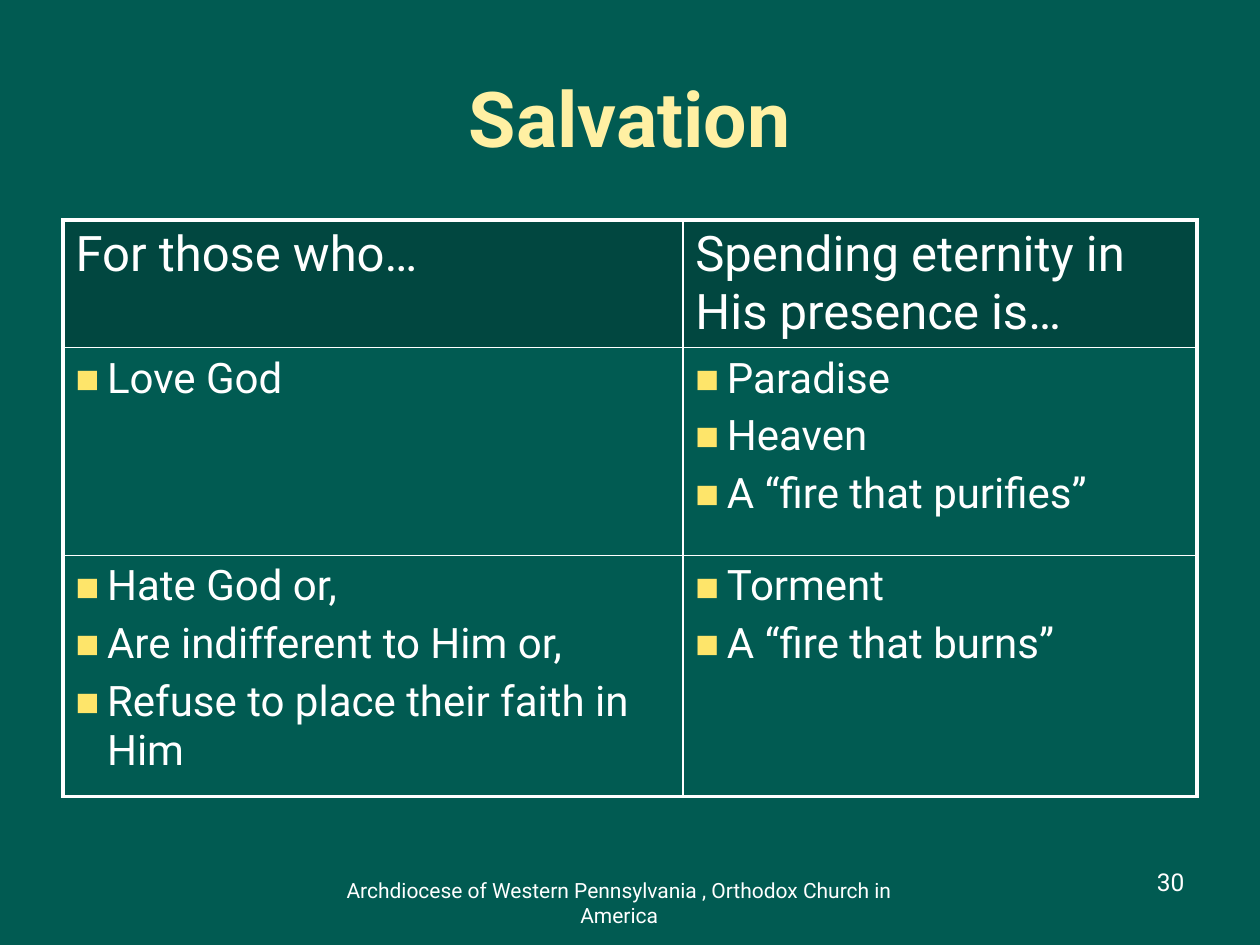
from dataclasses import dataclass
from lxml.etree import SubElement
from pptx import Presentation
from pptx.dml.color import RGBColor
from pptx.enum.text import MSO_ANCHOR, PP_ALIGN
from pptx.oxml.ns import qn
from pptx.util import Inches, Pt


@dataclass(frozen=True)
class Theme:
    font: str = "Roboto"
    back: str = "015B52"
    head: str = "014740"
    text: str = "FFFFFF"
    title: str = "FFF0A3"
    mark: str = "FEE56A"
    big: int = 44
    high: int = 28
    body: int = 24
    page: int = 14
    foot: int = 12
    outer: float = 2.25
    inner: float = 1


@dataclass(frozen=True)
class Label:
    text: str
    box: tuple[float, float, float, float]
    size: int
    color: str
    align: PP_ALIGN
    bold: bool = False
    anchor: MSO_ANCHOR = MSO_ANCHOR.TOP


LOOK = Theme()
WIDE, HIGH = Inches(10), Inches(7.5)
COLS = (0.492, 0.408)
ROWS = (0.135, 0.22, 0.255)
LABELS = (
    Label("Salvation", (0.05, 0.04, 0.9, 0.167), LOOK.big, LOOK.title,
          PP_ALIGN.CENTER, True, MSO_ANCHOR.MIDDLE),
    Label("30", (0.717, 0.911, 0.233, 0.067), LOOK.page, LOOK.text, PP_ALIGN.RIGHT),
    Label("Archdiocese of Western Pennsylvania , Orthodox Church in America",
          (0.233, 0.922, 0.517, 0.067), LOOK.foot, LOOK.text, PP_ALIGN.CENTER),
)
CELLS = (
    (("For those who…",), ("Spending eternity in His presence is…",)),
    (("Love God",), ("Paradise", "Heaven", "A “fire that purifies”")),
    (("Hate God or,", "Are indifferent to Him or,", "Refuse to place their faith in Him"),
     ("Torment", "A “fire that burns”")),
)


def place(x: float, y: float, w: float, h: float) -> tuple[int, ...]:
    return int(x * WIDE), int(y * HIGH), int(w * WIDE), int(h * HIGH)


def style(par, size: int, color: str, bold: bool = False) -> None:
    font = par.font
    font.name, font.size, font.bold = LOOK.font, Pt(size), bold
    font.color.rgb = RGBColor.from_string(color)


def write(slide, label: Label) -> None:
    frame = slide.shapes.add_textbox(*place(*label.box)).text_frame
    frame.word_wrap = True
    frame.vertical_anchor = label.anchor
    par = frame.paragraphs[0]
    par.text, par.alignment = label.text, label.align
    style(par, label.size, label.color, label.bold)


def space(par) -> None:
    gap = SubElement(par._p.get_or_add_pPr(), qn("a:spcBef"))
    SubElement(gap, qn("a:spcPct"), val="20000")


def mark(par) -> None:
    props = par._p.get_or_add_pPr()
    props.set("marL", str(Inches(0.25)))
    props.set("indent", str(-Inches(0.25)))
    tint = SubElement(props, qn("a:buClr"))
    SubElement(tint, qn("a:srgbClr"), val=LOOK.mark)
    SubElement(props, qn("a:buSzPct"), val="60000")
    SubElement(props, qn("a:buFont"), typeface=LOOK.font)
    SubElement(props, qn("a:buChar"), char="■")


def edge(cell, row: int, col: int) -> None:
    sides = {"L": col == 0, "R": col == len(COLS) - 1,
             "T": row == 0, "B": row == len(ROWS) - 1}
    props = cell._tc.get_or_add_tcPr()
    for side, outer in sides.items():
        width = Pt(LOOK.outer if outer else LOOK.inner)
        line = SubElement(props, qn(f"a:ln{side}"), w=str(width))
        fill = SubElement(line, qn("a:solidFill"))
        SubElement(fill, qn("a:srgbClr"), val=LOOK.text)


def fill_cell(cell, row: int, col: int) -> None:
    edge(cell, row, col)
    cell.fill.solid()
    cell.fill.fore_color.rgb = RGBColor.from_string(LOOK.back if row else LOOK.head)
    frame = cell.text_frame
    frame.text = "\n".join(CELLS[row][col])
    for par in frame.paragraphs:
        space(par)
        if row:
            mark(par)
        style(par, LOOK.body if row else LOOK.high, LOOK.text)


def draw_table(slide) -> None:
    box = place(0.05, 0.233, sum(COLS), sum(ROWS))
    table = slide.shapes.add_table(len(ROWS), len(COLS), *box).table
    for col, share in enumerate(COLS):
        table.columns[col].width = int(share * WIDE)
    for row, share in enumerate(ROWS):
        table.rows[row].height = int(share * HIGH)
        for col in range(len(COLS)):
            fill_cell(table.cell(row, col), row, col)


def main() -> None:
    deck = Presentation()
    deck.slide_width, deck.slide_height = WIDE, HIGH
    slide = deck.slides.add_slide(deck.slide_layouts[6])
    slide.background.fill.solid()
    slide.background.fill.fore_color.rgb = RGBColor.from_string(LOOK.back)
    draw_table(slide)
    for label in LABELS:
        write(slide, label)
    deck.save("out.pptx")


if __name__ == "__main__":
    main()
